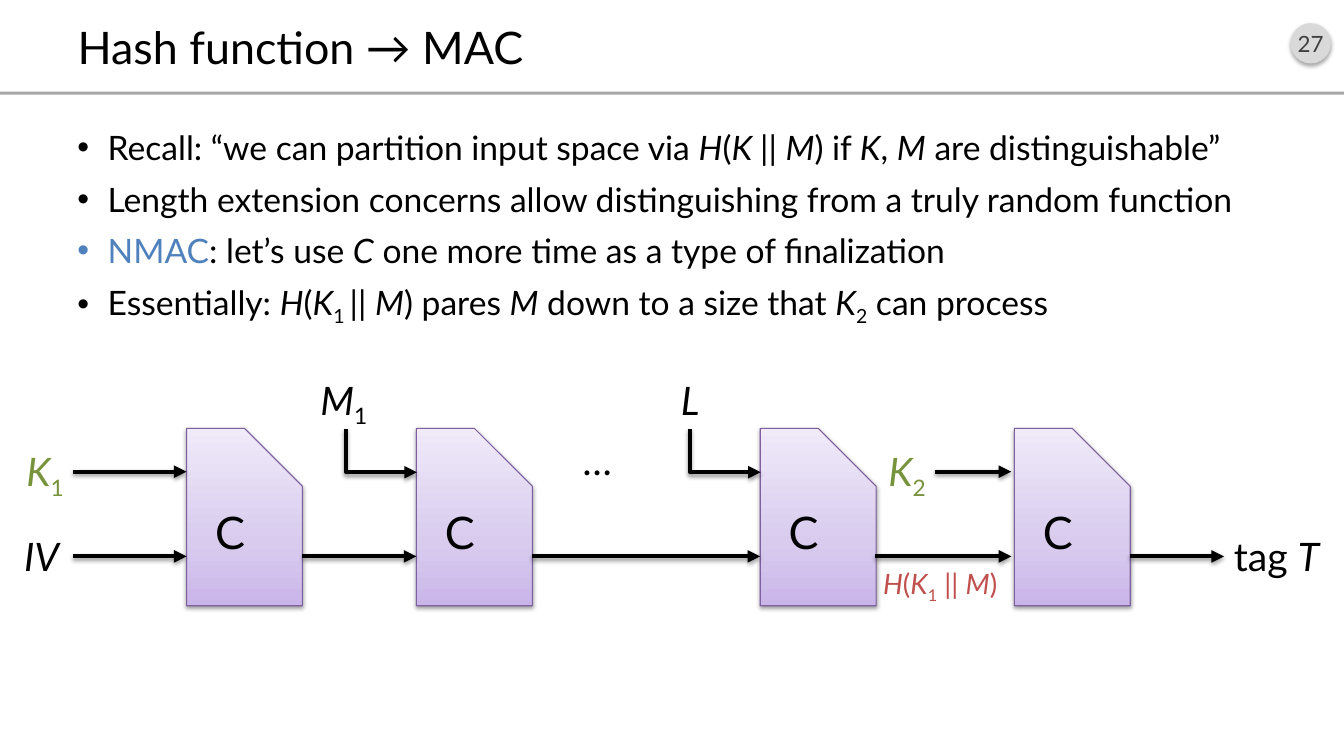
from copy import deepcopy

from lxml.etree import SubElement
from pptx import Presentation
from pptx.dml.color import RGBColor
from pptx.enum.shapes import MSO_CONNECTOR, MSO_SHAPE
from pptx.enum.text import MSO_ANCHOR, MSO_AUTO_SIZE, PP_ALIGN
from pptx.oxml.ns import qn
from pptx.util import Inches, Pt

COLORS = {
    "black": "000000", "number": "404040", "badge": "D9D9D9", "rule": "A6A6A6",
    "blue": "4F81BD", "green": "77933C", "red": "C0504D", "purple": "7D60A0",
    "dark": "C9B5E8", "middle": "D8CBEE", "light": "F0EAF9",
}
RGB = {name: RGBColor.from_string(value) for name, value in COLORS.items()}


def write(paragraph, text, size, color="black", align=PP_ALIGN.LEFT):
    """Tildes enclose italics and underscores enclose subscripts."""
    paragraph.alignment = align
    paragraph.font.size = Pt(size)
    paragraph.font.name = "Lato"
    paragraph.font.color.rgb = RGB[color]
    for i, part in enumerate(text.split("~")):
        for j, piece in enumerate(part.split("_")):
            if piece:
                run = paragraph.add_run()
                run.text = piece
                if i % 2:
                    run.font.italic = True
                if j % 2:
                    run.font._element.set("baseline", "-25000")


def add_shadow(shape, alpha=38, distance=1.6):
    properties = shape._element.spPr
    effects = properties.find(qn("a:effectLst"))
    if effects is None:
        effects = SubElement(properties, qn("a:effectLst"))
    shadow = SubElement(effects, qn("a:outerShdw"), blurRad=str(Pt(3.1)),
                        dist=str(Pt(distance)), dir="5400000", rotWithShape="0")
    color = SubElement(shadow, qn("a:srgbClr"), val=COLORS["black"])
    SubElement(color, qn("a:alpha"), val=str(alpha * 1000))


presentation = Presentation()
presentation.slide_width = Inches(13.33)
presentation.slide_height = Inches(7.5)
slide = presentation.slides.add_slide(presentation.slide_layouts[5])
shapes = slide.shapes

badge = shapes.add_shape(MSO_SHAPE.OVAL, Inches(12.8), Inches(0.23), Inches(0.4), Inches(0.4))
rule = shapes.add_shape(MSO_SHAPE.RECTANGLE, 0, Inches(0.91), Inches(13.33), Inches(0.03))
for shape, color in ((badge, "badge"), (rule, "rule")):
    shape.fill.solid()
    shape.fill.fore_color.rgb = RGB[color]
    shape.line.fill.background()
    shape.shadow.inherit = False
add_shadow(badge, 35, 1.8)
badge.text_frame.margin_left = badge.text_frame.margin_right = 0
badge.text_frame.vertical_anchor = MSO_ANCHOR.MIDDLE
badge.text_frame.word_wrap = False
write(badge.text_frame.paragraphs[0], "27", 16, "number", PP_ALIGN.CENTER)

title = shapes.title
title.left, title.top, title.width, title.height = map(Inches, (0.67, 0.16, 12, 0.6))
title.text_frame.vertical_anchor = MSO_ANCHOR.MIDDLE
title.text_frame.auto_size = MSO_AUTO_SIZE.NONE
write(title.text_frame.paragraphs[0], "Hash function → MAC", 32)

bullets = [
    "Recall: “we can partition input space via ~H~(~K ~|| ~M~) if ~K~, ~M~ are distinguishable”",
    "Length extension concerns allow distinguishing from a truly random function",
    "NMAC: let’s use ~C~ one more time as a type of finalization",
    "Essentially: ~H~(~K~_1 _|| ~M~) pares ~M~ down to a size that ~K~_2_ can process",
]
body = shapes.add_textbox(Inches(0.67), Inches(1.21), Inches(12), Inches(5.75)).text_frame
body.word_wrap = True
for index, text in enumerate(bullets):
    paragraph = body.add_paragraph() if index else body.paragraphs[0]
    paragraph.space_before = Pt(8)
    if text.startswith("NMAC"):
        term = paragraph.add_run()
        term.text = "NMAC"
        term.font.color.rgb = RGB["blue"]
        text = text.removeprefix("NMAC")
    write(paragraph, text, 24)
    properties = paragraph._p.get_or_add_pPr()
    properties.set("marL", str(Inches(0.3)))
    properties.set("indent", str(Inches(-0.3)))
    bullet_font = properties.makeelement(qn("a:buFont"), {"typeface": "Arial"})
    bullet = properties.makeelement(qn("a:buChar"), {"char": "•"})
    defaults = properties.find(qn("a:defRPr"))
    defaults.addprevious(bullet_font)
    defaults.addprevious(bullet)

for left in (1.85, 4.13, 7.54, 10.06):
    block = shapes.add_shape(MSO_SHAPE.SNIP_1_RECTANGLE, Inches(left), Inches(4.25),
                             Inches(1.15), Inches(1.76))
    block.adjustments[0] = 0.5
    block.fill.gradient()
    block.fill.gradient_angle = 90
    stop_list = block._element.spPr.find(".//" + qn("a:gsLst"))
    stop_list.append(deepcopy(stop_list[1]))
    for stop, color, position in zip(block.fill.gradient_stops,
                                     ("dark", "middle", "light"), (0, 0.35, 1)):
        stop.color.rgb = RGB[color]
        stop.position = position
    block.line.color.rgb = RGB["purple"]
    block.line.width = Pt(0.75)
    block.shadow.inherit = False
    add_shadow(block)
    block.text_frame.vertical_anchor = MSO_ANCHOR.MIDDLE
    write(block.text_frame.paragraphs[0], "C", 32, align=PP_ALIGN.CENTER)

arrows = [
    shapes.add_connector(MSO_CONNECTOR.STRAIGHT, Inches(start), Inches(y), Inches(end), Inches(y))
    for start, end, y in (
        (0.72, 1.85, 4.68), (9.27, 10.03, 4.68), (0.72, 1.85, 5.52), (3, 4.13, 5.52),
        (5.28, 7.54, 5.52), (8.68, 10.03, 5.52), (11.21, 12.14, 5.52))
]
for left in (3.57, 6.98):
    elbow = shapes.add_connector(MSO_CONNECTOR.ELBOW, Inches(left), Inches(4.12),
                                 Inches(left + 0.43), Inches(4.82))
    properties = elbow._element.spPr
    properties.find(qn("a:prstGeom")).set("prst", "bentConnector2")
    properties.find(qn("a:xfrm")).set("rot", "16200000")
    properties.find(qn("a:xfrm")).set("flipH", "1")
    arrows.append(elbow)
for arrow in arrows:
    arrow.line.color.rgb = RGB["black"]
    arrow.line.width = Pt(3)
    SubElement(arrow.line._get_or_add_ln(), qn("a:tailEnd"), type="triangle")
    add_shadow(arrow)

labels = [
    ("~IV~", 0.14, 5.23, 0.58, 28, "black", PP_ALIGN.LEFT, False),
    ("~K~_1_", 0.11, 4.39, 0.62, 28, "green", PP_ALIGN.RIGHT, False),
    ("~M~_1_", 3.08, 3.68, 0.71, 28, "black", PP_ALIGN.LEFT, True),
    ("~L~", 6.49, 3.68, 0.71, 28, "black", PP_ALIGN.CENTER, True),
    ("~…~", 5.69, 4.28, 0.71, 28, "black", PP_ALIGN.LEFT, True),
    ("~K~_2_", 8.66, 4.39, 0.62, 28, "green", PP_ALIGN.RIGHT, False),
    ("tag ~T~", 12.14, 5.23, 1.08, 28, "black", PP_ALIGN.LEFT, False),
    ("~H~(~K~_1_ || ~M~)", 8.66, 5.57, 1.38, 20, "red", PP_ALIGN.LEFT, False),
]
for text, left, top, width, size, color, align, wrap in labels:
    height = 0.57 if size == 28 else 0.44
    label = shapes.add_textbox(Inches(left), Inches(top), Inches(width), Inches(height))
    label.text_frame.word_wrap = wrap
    label.text_frame.auto_size = MSO_AUTO_SIZE.SHAPE_TO_FIT_TEXT
    write(label.text_frame.paragraphs[0], text, size, color, align)

presentation.save("out.pptx")
